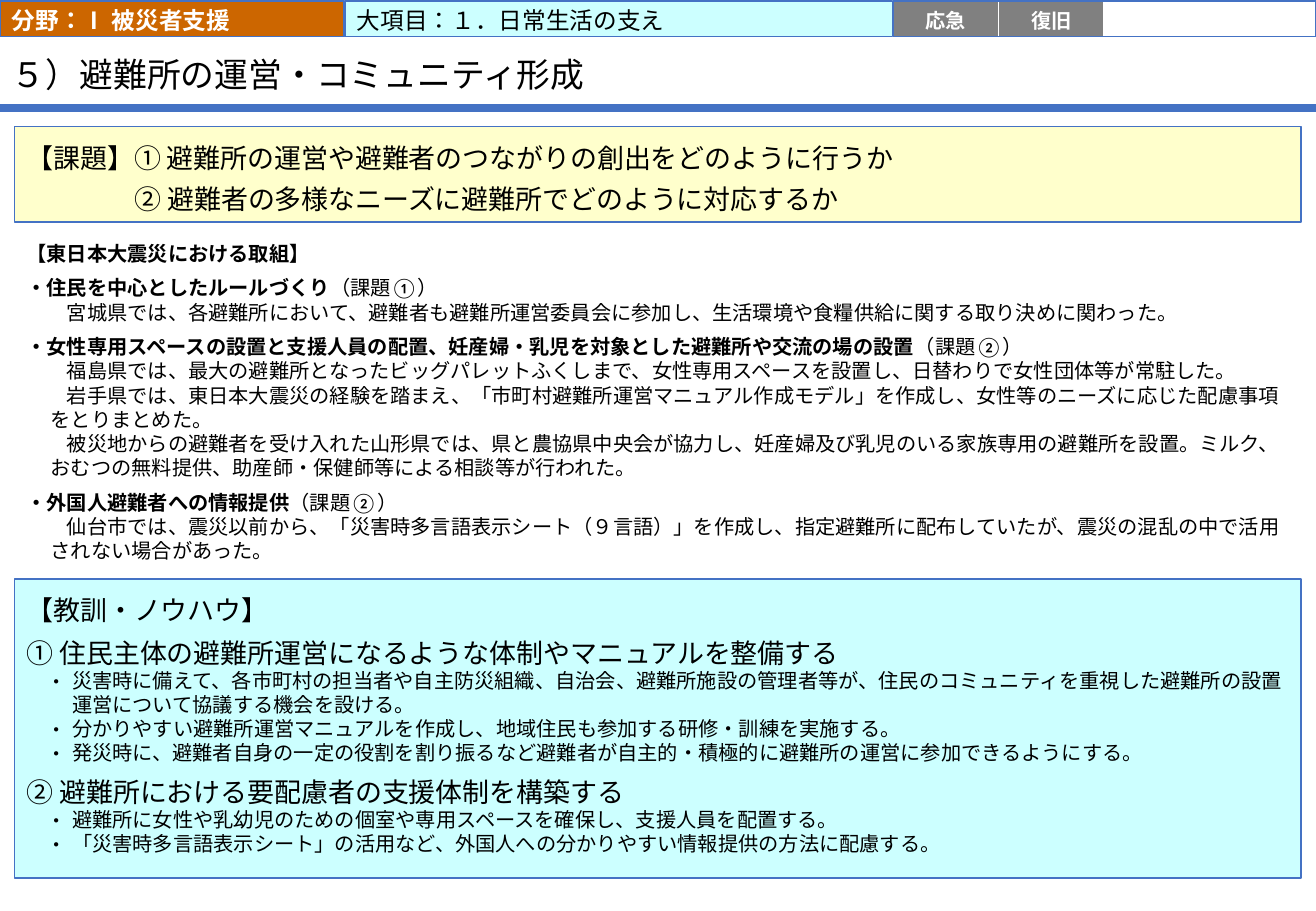
import pptx
import pptx.dml.color
import pptx.enum.lang
import pptx.enum.shapes
import pptx.enum.text
import pptx.oxml.ns
import pptx.util
from lxml import etree

Pt = pptx.util.Pt
ALIGN = pptx.enum.text.PP_ALIGN
ANCHOR = pptx.enum.text.MSO_ANCHOR

COLORS = {
    "blue": "4472C4", "orange": "CC6600", "cyan": "CCFFFF", "yellow": "FFFFCC",
    "gray": "808080", "white": "FFFFFF", "black": "000000",
}
LATIN = "Calibri"
GOTHIC = "Noto Sans CJK JP"

ISSUES = [
    ("【課題】① 避難所の運営や避難者のつながりの創出をどのように行うか", 0),
    ("② 避難者の多様なニーズに避難所でどのように対応するか", 64),
]
EFFORTS_HEADING = "【東日本大震災における取組】"
EFFORTS = [
    ("・住民を中心としたルールづくり", "（課題①）", [
        "宮城県では、各避難所において、避難者も避難所運営委員会に参加し、生活環境や食糧供給に関する取り決めに関わった。",
    ]),
    ("・女性専用スペースの設置と支援人員の配置、妊産婦・乳児を対象とした避難所や交流の場の設置", "（課題②）", [
        "福島県では、最大の避難所となったビッグパレットふくしまで、女性専用スペースを設置し、日替わりで女性団体等が常駐した。",
        "岩手県では、東日本大震災の経験を踏まえ、「市町村避難所運営マニュアル作成モデル」を作成し、女性等のニーズに応じた配慮事項をとりまとめた。",
        "被災地からの避難者を受け入れた山形県では、県と農協県中央会が協力し、妊産婦及び乳児のいる家族専用の避難所を設置。ミルク、おむつの無料提供、助産師・保健師等による相談等が行われた。",
    ]),
    ("・外国人避難者への情報提供", "（課題②）", [
        "仙台市では、震災以前から、「災害時多言語表示シート（９言語）」を作成し、指定避難所に配布していたが、震災の混乱の中で活用されない場合があった。",
    ]),
]
LESSONS_HEADING = "【教訓・ノウハウ】"
LESSONS = [
    ("① 住民主体の避難所運営になるような体制やマニュアルを整備する", [
        "災害時に備えて、各市町村の担当者や自主防災組織、自治会、避難所施設の管理者等が、住民のコミュニティを重視した避難所の設置運営について協議する機会を設ける。",
        "分かりやすい避難所運営マニュアルを作成し、地域住民も参加する研修・訓練を実施する。",
        "発災時に、避難者自身の一定の役割を割り振るなど避難者が自主的・積極的に避難所の運営に参加できるようにする。",
    ]),
    ("② 避難所における要配慮者の支援体制を構築する", [
        "避難所に女性や乳幼児のための個室や専用スペースを確保し、支援人員を配置する。",
        "「災害時多言語表示シート」の活用など、外国人への分かりやすい情報提供の方法に配慮する。",
    ]),
]


def rgb(name):
    return pptx.dml.color.RGBColor.from_string(COLORS[name])


def add_box(slide, box, fill=None, line=None, margins=(7.2, 1.5, 7.2, 0), anchor=ANCHOR.MIDDLE):
    shape = slide.shapes.add_shape(pptx.enum.shapes.MSO_SHAPE.RECTANGLE, *map(Pt, box))
    shape.shadow.inherit = False
    if fill:
        shape.fill.solid()
        shape.fill.fore_color.rgb = rgb(fill)
    else:
        shape.fill.background()
    if line:
        shape.line.color.rgb = rgb(line)
        shape.line.width = Pt(1)
    else:
        shape.line.fill.background()
    set_frame(shape.text_frame, margins, anchor)
    return shape


def set_frame(frame, margins, anchor):
    frame.word_wrap = True
    frame.vertical_anchor = anchor
    frame.margin_left, frame.margin_top, frame.margin_right, frame.margin_bottom = map(Pt, margins)


def style_run(run, size, font, bold=False, color="black"):
    run.font.size = Pt(size)
    run.font.bold = bold
    run.font.name = font
    run.font.color.rgb = rgb(color)
    run.font.language_id = pptx.enum.lang.MSO_LANGUAGE_ID.JAPANESE
    east_asian = etree.SubElement(run.font._element, pptx.oxml.ns.qn("a:ea"))
    east_asian.set("typeface", font)


def write(frame, text, size, font=GOTHIC, bold=False, color="black",
          align=ALIGN.LEFT, before=0, spacing=None, left=0, first=0):
    paragraph = frame.add_paragraph() if frame.text else frame.paragraphs[0]
    paragraph.text = text
    paragraph.alignment = align
    paragraph.space_before = Pt(before)
    if spacing:
        paragraph.line_spacing = spacing
    properties = paragraph._p.get_or_add_pPr()
    properties.set("marL", str(Pt(left)))
    properties.set("indent", str(Pt(first)))
    style_run(paragraph.runs[0], size, font, bold, color)
    return paragraph


def add_bullet(paragraph):
    properties = paragraph._p.get_or_add_pPr()
    font = etree.SubElement(properties, pptx.oxml.ns.qn("a:buFont"))
    font.set("typeface", GOTHIC)
    bullet = etree.SubElement(properties, pptx.oxml.ns.qn("a:buChar"))
    bullet.set("char", "・")


def add_header(slide, left, top, width, height):
    field = add_box(slide, (left, top, 203.8, height), "orange", "blue")
    write(field.text_frame, "分野：Ⅰ 被災者支援", 14, LATIN, True, "white")
    category = add_box(slide, (left + 204.5, top, 326, height), "cyan", "blue")
    write(category.text_frame, "大項目：１．日常生活の支え", 14, LATIN)
    phases_left = left + 529.2
    phase_width = (left + width - phases_left) / 4
    for index, phase in enumerate(["応急", "復旧", "", ""]):
        box = (phases_left + index * phase_width, top, phase_width, height)
        cell = add_box(slide, box, "gray" if phase else "white", "white", (0, 1.5, 0, 0))
        if phase:
            write(cell.text_frame, phase, 12, LATIN, True, "white", ALIGN.CENTER)
    add_box(slide, (phases_left, top, 4 * phase_width, height), line="blue")


def add_title(slide, left, top, width, height):
    title = slide.shapes.add_textbox(*map(Pt, (left, top, width, height)))
    set_frame(title.text_frame, (7.2, 3, 7.2, 0), ANCHOR.MIDDLE)
    write(title.text_frame, "５）避難所の運営・コミュニティ形成", 20, spacing=0.9)
    rule_top = Pt(top + height - 0.8)
    rule = slide.shapes.add_connector(
        pptx.enum.shapes.MSO_CONNECTOR.STRAIGHT, Pt(left), rule_top, Pt(left + 780), rule_top)
    rule.line.color.rgb = rgb("blue")
    rule.line.width = Pt(4.5)
    etree.SubElement(rule._element.spPr, pptx.oxml.ns.qn("a:effectLst"))


def add_issues(slide, *box):
    frame = add_box(slide, box, "yellow", "blue", (7.2, 8.6, 7.2, 8.6)).text_frame
    for text, left in ISSUES:
        write(frame, text, 16, spacing=Pt(24), left=left)


def add_efforts(slide, *box):
    frame = add_box(slide, box, "white", margins=(7.2, 3.6, 7.2, 3.6)).text_frame
    spacing = Pt(14.4)
    write(frame, EFFORTS_HEADING, 12, LATIN, True, spacing=spacing)
    for heading, issue, details in EFFORTS:
        paragraph = write(frame, heading, 12, LATIN, True, before=6, spacing=spacing)
        run = paragraph.add_run()
        run.text = issue
        style_run(run, 12, LATIN)
        for detail in details:
            write(frame, detail, 12, spacing=spacing, left=14.4, first=9.6)


def add_lessons(slide, *box):
    frame = add_box(slide, box, "cyan", "blue", (7.2, 8.6, 7.2, 0), ANCHOR.TOP).text_frame
    write(frame, LESSONS_HEADING, 16, spacing=Pt(19.2))
    for heading, details in LESSONS:
        write(frame, heading, 16, before=6, spacing=Pt(19.2))
        for detail in details:
            add_bullet(write(frame, detail, 12, spacing=Pt(14.3), left=27, first=-15))


def main():
    presentation = pptx.Presentation()
    presentation.slide_width = Pt(780)
    presentation.slide_height = Pt(540)
    slide = presentation.slides.add_slide(presentation.slide_layouts[6])
    add_efforts(slide, 8.6, 145.4, 762.5, 185.8)
    add_title(slide, 0, 23, 682.6, 41.8)
    add_header(slide, 0, 0.7, 780, 20.9)
    add_issues(slide, 8.6, 74.9, 762.5, 56.9)
    add_lessons(slide, 8.6, 343.4, 762.5, 177.1)
    presentation.save("out.pptx")


if __name__ == "__main__":
    main()
